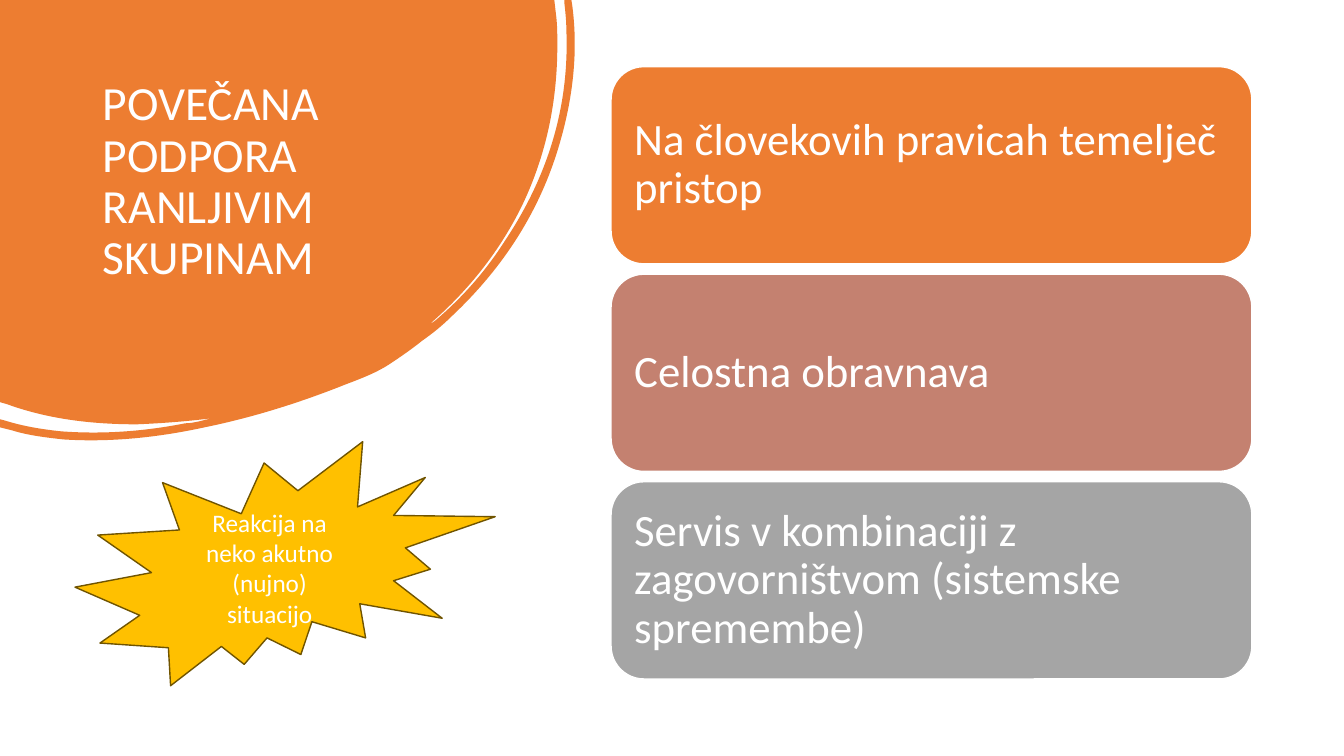
from dataclasses import dataclass

from lxml import etree
from pptx import Presentation
from pptx import util as u
from pptx.dml.color import RGBColor
from pptx.enum import shapes, text
from pptx.oxml import ns


@dataclass(frozen=True)
class Theme:
    font: str = "Calibri"
    white: str = "FFFFFF"
    orange: str = "ED7D31"
    clay: str = "C48170"
    grey: str = "A5A5A5"
    gold: str = "FFC000"
    brown: str = "705400"
    title_size: int = 34
    card_size: int = 32
    burst_size: int = 18


@dataclass(frozen=True)
class Card:
    words: str
    fill: str


@dataclass(frozen=True)
class Area:
    left: float
    top: float
    width: float
    height: float

    def lengths(self) -> tuple[u.Cm, u.Cm, u.Cm, u.Cm]:
        return u.Cm(self.left), u.Cm(self.top), u.Cm(self.width), u.Cm(self.height)


THEME = Theme()
CARDS = [
    Card("Na človekovih pravicah temelječ pristop", THEME.orange),
    Card("Celostna obravnava", THEME.clay),
    Card("Servis v kombinaciji z zagovorništvom (sistemske spremembe)", THEME.grey),
]
FIRST_CARD = Area(15.4, 1.68, 16.15, 4.97)
CARD_PITCH = 5.23
CARD_INSET = 0.34
TITLE_AREA = Area(2.34, 1.88, 8.94, 5.64)
BURST_AREA = Area(1.89, 11.13, 10.59, 6.15)

BLOB_AREA = Area(0, 0, 14.5, 11.1)
BLOB_UNIT = 0.0254
BLOB_OUTLINE = [
    (0, 0), (550, 0), (552, 17),
    (553, 26, 553, 36, 553, 45),
    (553, 101, 542, 154, 518, 204),
    (496, 249, 465, 288, 427, 321),
    (429, 321, 430, 319, 432, 318),
    (459, 295, 482, 269, 501, 239),
    (543, 176, 565, 107, 562, 30),
    (562, 21, 561, 12, 560, 3),
    (560, 0), (567, 0), (568, 7),
    (574, 54, 568, 102, 553, 150),
    (533, 214, 497, 268, 448, 314),
    (439, 323, 429, 331, 419, 338),
    (409, 346, 399, 353, 387, 361),
    (375, 369, 360, 375, 344, 381),
    (299, 399, 252, 414, 203, 424),
    (157, 434, 110, 439, 63, 436),
    (45, 434, 28, 432, 12, 427),
    (0, 424), (0, 416), (4, 417),
    (23, 423, 42, 426, 61, 428),
    (103, 431, 143, 428, 184, 420),
    (189, 420, 193, 419, 198, 418),
    (202, 417, 206, 416, 210, 415),
    (186, 418, 161, 420, 136, 421),
    (92, 421, 48, 416, 7, 401),
    (0, 399),
]


def paint(shape, fill: str, line: str | None = None) -> None:
    shape.shadow.inherit = False
    shape.fill.solid()
    shape.fill.fore_color.rgb = RGBColor.from_string(fill)
    if line is None:
        shape.line.fill.background()
    else:
        shape.line.color.rgb = RGBColor.from_string(line)
        shape.line.width = u.Pt(1)


def write(shape, words: str, size: int, align: text.PP_ALIGN, spacing: float,
          anchor: text.MSO_ANCHOR = text.MSO_ANCHOR.MIDDLE) -> None:
    frame = shape.text_frame
    frame.word_wrap = True
    frame.auto_size = text.MSO_AUTO_SIZE.NONE
    frame.vertical_anchor = anchor
    para = frame.paragraphs[0]
    para.alignment = align
    para.line_spacing = spacing
    span = para.add_run()
    span.text = words
    span.font.name = THEME.font
    span.font.size = u.Pt(size)
    span.font.color.rgb = RGBColor.from_string(THEME.white)


def bend(blob, pieces: list[tuple[int, ...]]) -> None:
    outline = blob.element.find(".//" + ns.qn("a:path"))
    outline.set("w", str(blob.width))
    outline.set("h", str(blob.height))
    for segment, piece in zip(outline.findall(ns.qn("a:lnTo")), pieces):
        if len(piece) == 2:
            continue
        curve = etree.Element(ns.qn("a:cubicBezTo"))
        for x, y in zip(piece[::2], piece[1::2]):
            etree.SubElement(curve, ns.qn("a:pt"),
                             x=str(u.Cm(x * BLOB_UNIT)), y=str(u.Cm(y * BLOB_UNIT)))
        outline.replace(segment, curve)


def add_blob(page):
    points = [
        (u.Cm(piece[-2] * BLOB_UNIT), u.Cm(piece[-1] * BLOB_UNIT))
        for piece in BLOB_OUTLINE
    ]
    builder = page.shapes.build_freeform(*points[0])
    builder.add_line_segments(points[1:], close=True)
    blob = builder.convert_to_shape()
    blob.left, blob.top, blob.width, blob.height = BLOB_AREA.lengths()
    bend(blob, BLOB_OUTLINE[1:])
    paint(blob, THEME.orange)
    return blob


def place_title(page, blob) -> None:
    title = page.shapes.title
    title.left, title.top, title.width, title.height = TITLE_AREA.lengths()
    write(title, "POVEČANA PODPORA RANLJIVIM SKUPINAM", THEME.title_size,
          text.PP_ALIGN.LEFT, 0.9, text.MSO_ANCHOR.TOP)
    blob.element.addnext(title.element)


def add_card(page, card: Card, index: int) -> None:
    area = Area(FIRST_CARD.left, FIRST_CARD.top + index * CARD_PITCH,
                FIRST_CARD.width, FIRST_CARD.height)
    box = page.shapes.add_shape(
        shapes.MSO_SHAPE.ROUNDED_RECTANGLE, *area.lengths())
    paint(box, card.fill, THEME.white)
    write(box, card.words, THEME.card_size, text.PP_ALIGN.LEFT, 0.9)
    frame = box.text_frame
    frame.margin_left = frame.margin_right = u.Cm(CARD_INSET)
    frame.margin_top = frame.margin_bottom = u.Cm(CARD_INSET)


def add_burst(page) -> None:
    burst = page.shapes.add_shape(
        shapes.MSO_SHAPE.EXPLOSION2, *BURST_AREA.lengths())
    paint(burst, THEME.gold, THEME.brown)
    write(burst, "Reakcija na neko akutno (nujno) situacijo", THEME.burst_size,
          text.PP_ALIGN.CENTER, 1.0)


def main() -> None:
    deck = Presentation()
    deck.slide_width, deck.slide_height = u.Cm(33.87), u.Cm(19.05)
    page = deck.slides.add_slide(deck.slide_layouts.get_by_name("Title Only"))
    place_title(page, add_blob(page))
    for index, card in enumerate(CARDS):
        add_card(page, card, index)
    add_burst(page)
    deck.save("out.pptx")


if __name__ == "__main__":
    main()
